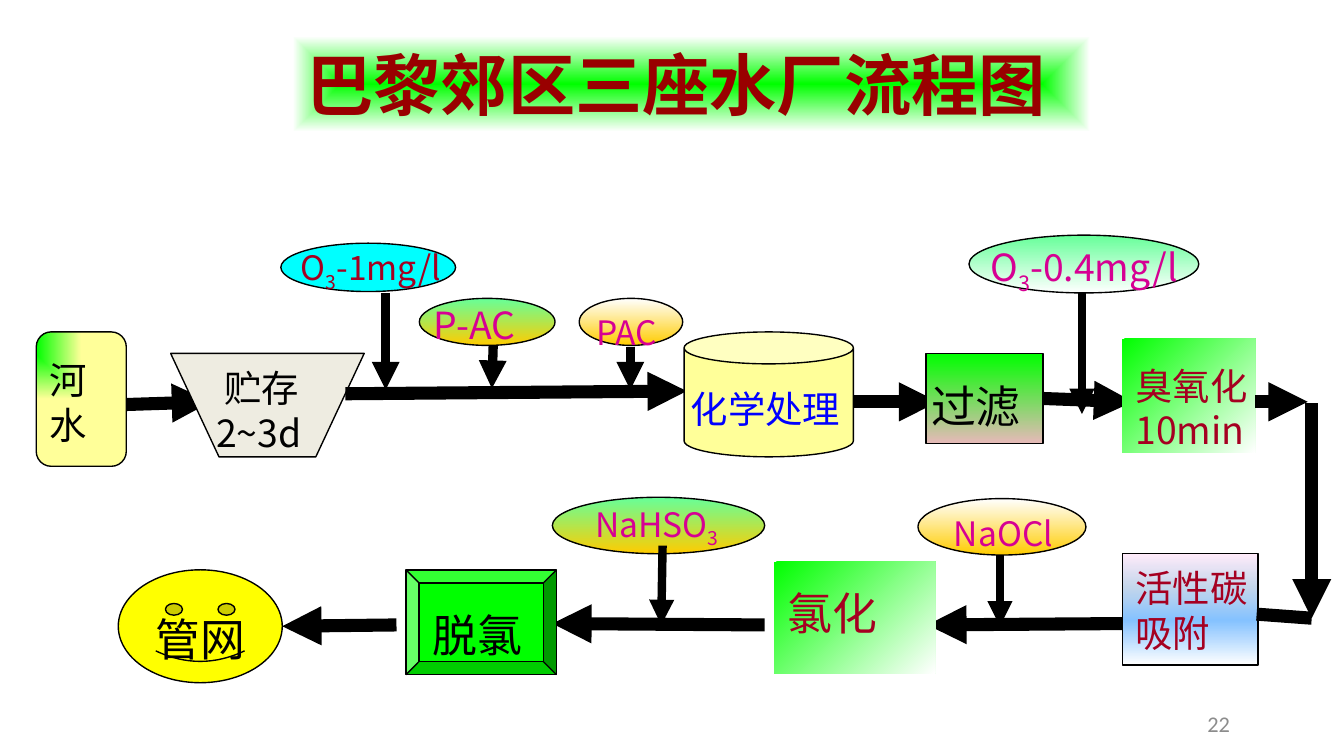
from lxml.etree import SubElement
from pptx import Presentation
from pptx.dml.color import RGBColor
from pptx.enum.shapes import MSO_CONNECTOR, MSO_SHAPE
from pptx.enum.text import MSO_ANCHOR, MSO_AUTO_SIZE, PP_ALIGN
from pptx.oxml.ns import qn
from pptx.util import Inches, Pt

# Theme: colours, gradients, type sizes and line weights
THEME = {
    "cjk": "Noto Sans CJK SC", "latin": "Calibri",
    "black": "000000", "title": "990000", "dark_red": "A50021", "magenta": "D60093",
    "blue": "0000FF", "grey": "8C8C8C",
    "title_size": 36, "big": 24, "mid": 20, "small": 18, "number": 12,
    "border": 0.75, "flow": 7, "dose": 5, "thin_dose": 4.5,
}
DOWN, DIAGONAL = {"ang": 90}, {"ang": 45}
GREEN_GLOW = ([(0, "00FF00"), (100, "FFFFFF")], {"path": "shape", "to": (50, 50, 50, 50)})
GREEN_CORNER = ([(0, "00FF00"), (100, "FFFF99")], {"path": "rect", "to": (0, 0, 100, 100)})
GREEN_FADE = ([(0, "00FF00"), (100, "FFFFFF")], DIAGONAL)
GREEN_PINK = ([(0, "00FF00"), (100, "E6B9B8")], DOWN)
MINT_GOLD = ([(0, "66FF99"), (100, "FFCC00")], DOWN)
MINT_WHITE = ([(0, "66FF99"), (100, "FFFFFF")], DOWN)
WHITE_GOLD = ([(0, "FFFFFF"), (100, "FFCC00")], DOWN)
SKY = ([(0, "FFEBFA"), (30, "C4D6EB"), (60, "85C2FF"), (100, "FFFFFF")], DOWN)

# Grid: a 16:9 slide, the axes of the two process rows and the return pipe, in inches
WIDTH = 10
HEIGHT = WIDTH * 9 / 16
ROW_1, ROW_2, TURN = 2.99, 4.65, 9.76

TITLE, TITLE_BOX = "巴黎郊区三座水厂流程图", (2.18, 0.27, 5.93, 0.71)
NUMBER, NUMBER_BOX = "22", (7.17, 5.19, 2.08, 0.38)

# Steps in flow order; each arrow is (start, end, weight, has a head),
# and a start of None leaves from the middle of the right side
STEPS = [
    {"shape": MSO_SHAPE.ROUNDED_RECTANGLE, "box": (0.27, 2.47, 0.67, 1), "fill": GREEN_CORNER,
     "text": "河水", "label": (0.27, 2.61, 0.57, 0.77), "size": "mid", "color": "black",
     "arrows": [((0.94, 3.01), (1.57, ROW_1), "flow", True)]},
    {"outline": [(1.27, 2.63), (1.63, 3.4), (2.35, 3.4), (2.71, 2.63)], "fill": "EEECE1",
     "text": " 贮存 2~3d", "label": (1.51, 2.67, 1.05, 0.77), "size": "mid", "color": "black",
     "arrows": [((2.57, 2.93), (5.11, 2.91), "flow", True)]},
    {"shape": MSO_SHAPE.CAN, "box": (5.09, 2.47, 1.26, 0.93), "fill": "FFFF99", "adj": 0.256,
     "text": "化学处理", "label": (5.14, 2.87, 1.14, 0.34), "size": "mid", "color": "blue",
     "inset": 0, "arrows": [((6.35, ROW_1), (6.98, ROW_1), "flow", True)]},
    {"shape": MSO_SHAPE.RECTANGLE, "box": (6.89, 2.63, 0.87, 0.67), "fill": GREEN_PINK,
     "text": "过滤", "label": (6.83, 2.77, 0.99, 0.51), "size": "big", "color": "black",
     "arrows": [(None, (8.43, ROW_1), "flow", True)]},
    {"shape": MSO_SHAPE.RECTANGLE, "box": (8.35, 2.52, 0.99, 0.85), "fill": GREEN_FADE,
     "border": False, "text": "臭氧化10min", "label": (8.35, 2.65, 1.14, 0.77),
     "size": "mid", "color": "dark_red",
     "arrows": [((9.34, ROW_1), (9.73, ROW_1), "flow", True),
                ((TURN, 3), (TURN, 4.6), "flow", True)]},
    {"shape": MSO_SHAPE.RECTANGLE, "box": (8.35, 4.12, 1.01, 0.83), "fill": SKY,
     "text": "活性碳吸附", "label": (8.35, 4.16, 1.22, 0.77), "size": "mid", "color": "dark_red",
     "arrows": [((9.35, 4.57), (TURN, 4.6), "flow", False),
                ((8.35, 4.64), (6.9, ROW_2), "flow", True)]},
    {"shape": MSO_SHAPE.RECTANGLE, "box": (5.76, 4.18, 1.2, 0.83), "fill": GREEN_FADE,
     "border": False, "text": "氯化", "label": (5.76, 4.31, 1.16, 0.51),
     "size": "big", "color": "dark_red",
     "arrows": [((5.69, ROW_2), (4.11, 4.64), "flow", True)]},
    {"shape": MSO_SHAPE.BEVEL, "box": (3.02, 4.24, 1.12, 0.78), "fill": "00FF00", "adj": 0.125,
     "text": "脱氯", "label": (3.12, 4.47, 1.12, 0.51), "size": "big", "color": "black",
     "arrows": [((2.95, ROW_2), (2.1, 4.66), "flow", True)]},
    {"shape": MSO_SHAPE.SMILEY_FACE, "box": (0.88, 4.24, 1.22, 0.84), "fill": "FFFF00",
     "adj": 0.047, "text": "管网", "label": (1.06, 4.5, 1.02, 0.5), "size": "big",
     "color": "black", "arrows": []},
]

# Doses: text ("_" lowers the next character), oval, fill, label, size, colour, arrow, weight
DOSES = [
    ("O_3-1mg/l", (2.09, 1.81, 1.3, 0.36), "00FFFF", (2.14, 1.79, 1.3, 1.06),
     "small", "dark_red", ((2.87, 2.18), (2.87, 2.9)), "dose"),
    ("P-AC", (3.12, 2.22, 1.01, 0.35), MINT_GOLD, (3.13, 2.2, 1.05, 0.44),
     "mid", "magenta", ((3.67, 2.57), (3.66, 2.89)), "dose"),
    ("PAC", (4.31, 2.22, 0.77, 0.35), WHITE_GOLD, (4.34, 2.27, 0.77, 0.4),
     "small", "magenta", ((4.69, 2.58), (4.69, 2.9)), "dose"),
    ("O_3-0.4mg/l", (7.21, 1.75, 1.71, 0.43), MINT_WHITE, (7.27, 1.77, 1.66, 0.44),
     "mid", "magenta", ((8.05, 2.18), (8.05, 3.08)), "thin_dose"),
    ("NaHSO_3", (4.11, 3.7, 1.58, 0.42), MINT_GOLD, (4.33, 3.7, 1.3, 0.4),
     "small", "magenta", ((4.93, 4.06), (4.92, 4.65)), "thin_dose"),
    ("NaOCl", (6.83, 3.71, 1.25, 0.42), WHITE_GOLD, (7, 3.77, 1, 0.4),
     "small", "magenta", ((7.44, 4.13), (7.44, 4.66)), "thin_dose"),
]


def inches(values):
    return [Inches(value) for value in values]


def paint(shape, fill):
    if isinstance(fill, str):
        shape.fill.solid()
        shape.fill.fore_color.rgb = RGBColor.from_string(fill)
        return
    stops, course = fill
    shape.fill.background()
    empty = shape._element.spPr.find(qn("a:noFill"))
    gradient = SubElement(shape._element.spPr, qn("a:gradFill"), rotWithShape="1")
    stop_list = SubElement(gradient, qn("a:gsLst"))
    for position, color in stops:
        stop = SubElement(stop_list, qn("a:gs"), pos=str(position * 1000))
        SubElement(stop, qn("a:srgbClr"), val=color)
    if "ang" in course:
        SubElement(gradient, qn("a:lin"), ang=str(course["ang"] * 60000), scaled="1")
    else:
        focus = SubElement(gradient, qn("a:path"), path=course["path"])
        SubElement(focus, qn("a:fillToRect"),
                   {side: str(share * 1000) for side, share in zip("ltrb", course["to"])})
    shape._element.spPr.replace(empty, gradient)


def write(frame, text, size, color, font="cjk", bold=False, align=PP_ALIGN.LEFT, **frame_format):
    for name, value in {"word_wrap": True, "auto_size": MSO_AUTO_SIZE.NONE, **frame_format}.items():
        setattr(frame, name, value)
    paragraph = frame.paragraphs[0]
    paragraph.alignment = align
    head, _, tail = text.partition("_")
    for part, lowered in ((head, False), (tail[:1], True), (tail[1:], False)):
        if not part:
            continue
        run = paragraph.add_run()
        run.text = part
        for name, value in {"size": Pt(THEME[size]), "name": THEME[font], "bold": bold}.items():
            setattr(run.font, name, value)
        run.font.color.rgb = RGBColor.from_string(THEME[color])
        properties = run._r.get_or_add_rPr()
        SubElement(properties, qn("a:ea"), typeface=THEME[font])
        if lowered:
            properties.set("baseline", "-25000")


def add_label(slide, box, text, size, color, inset=None, **text_format):
    frame = slide.shapes.add_textbox(*inches(box)).text_frame
    if inset is not None:
        for side in ("left", "top", "right", "bottom"):
            setattr(frame, f"margin_{side}", Inches(inset))
    write(frame, text, size, color, **text_format)


def add_body(slide, fill, shape=None, box=None, outline=None, adj=None, border=True):
    if outline:
        builder = slide.shapes.build_freeform(*inches(outline[0]), scale=1.0)
        builder.add_line_segments([inches(point) for point in outline[1:]], close=True)
        body = builder.convert_to_shape()
    else:
        body = slide.shapes.add_shape(shape, *inches(box))
    if adj is not None:
        body.adjustments[0] = adj
    body.shadow.inherit = False
    paint(body, fill)
    if border:
        body.line.color.rgb = RGBColor.from_string(THEME["black"])
        body.line.width = Pt(THEME["border"])
    else:
        body.line.fill.background()
    return body


def add_arrow(slide, start, end, weight, headed=True, source=None):
    arrow = slide.shapes.add_connector(MSO_CONNECTOR.STRAIGHT, *inches((start or end) + end))
    if start is None:
        arrow.begin_connect(source, 3)
    arrow.line.color.rgb = RGBColor.from_string(THEME["black"])
    arrow.line.width = Pt(THEME[weight])
    if headed:
        SubElement(arrow.line._get_or_add_ln(), qn("a:tailEnd"), type="triangle")
    SubElement(arrow._element.spPr, qn("a:effectLst"))


def main():
    deck = Presentation()
    deck.slide_width, deck.slide_height = inches((WIDTH, HEIGHT))
    slide = deck.slides.add_slide(deck.slide_layouts[5])

    # Title and slide number
    title = slide.shapes.title
    for name, value in zip(("left", "top", "width", "height"), inches(TITLE_BOX)):
        setattr(title, name, value)
    paint(title, GREEN_GLOW)
    write(title.text_frame, TITLE, "title_size", "title", bold=True,
          vertical_anchor=MSO_ANCHOR.MIDDLE)
    add_label(slide, NUMBER_BOX, NUMBER, "number", "grey", font="latin",
              align=PP_ALIGN.RIGHT, vertical_anchor=MSO_ANCHOR.MIDDLE)

    # Process steps: each one covers the tip of the arrow before it
    for step in STEPS:
        look = {key: step[key] for key in ("shape", "box", "outline", "adj", "border") if key in step}
        body = add_body(slide, step["fill"], **look)
        add_label(slide, step["label"], step["text"], step["size"], step["color"], step.get("inset"))
        for start, end, weight, headed in step["arrows"]:
            add_arrow(slide, start, end, weight, headed, body)

    # Chemical doses
    for text, oval, fill, label, size, color, (start, end), weight in DOSES:
        add_body(slide, fill, MSO_SHAPE.OVAL, oval)
        add_arrow(slide, start, end, weight)
        add_label(slide, label, text, size, color)

    deck.save("out.pptx")


if __name__ == "__main__":
    main()
